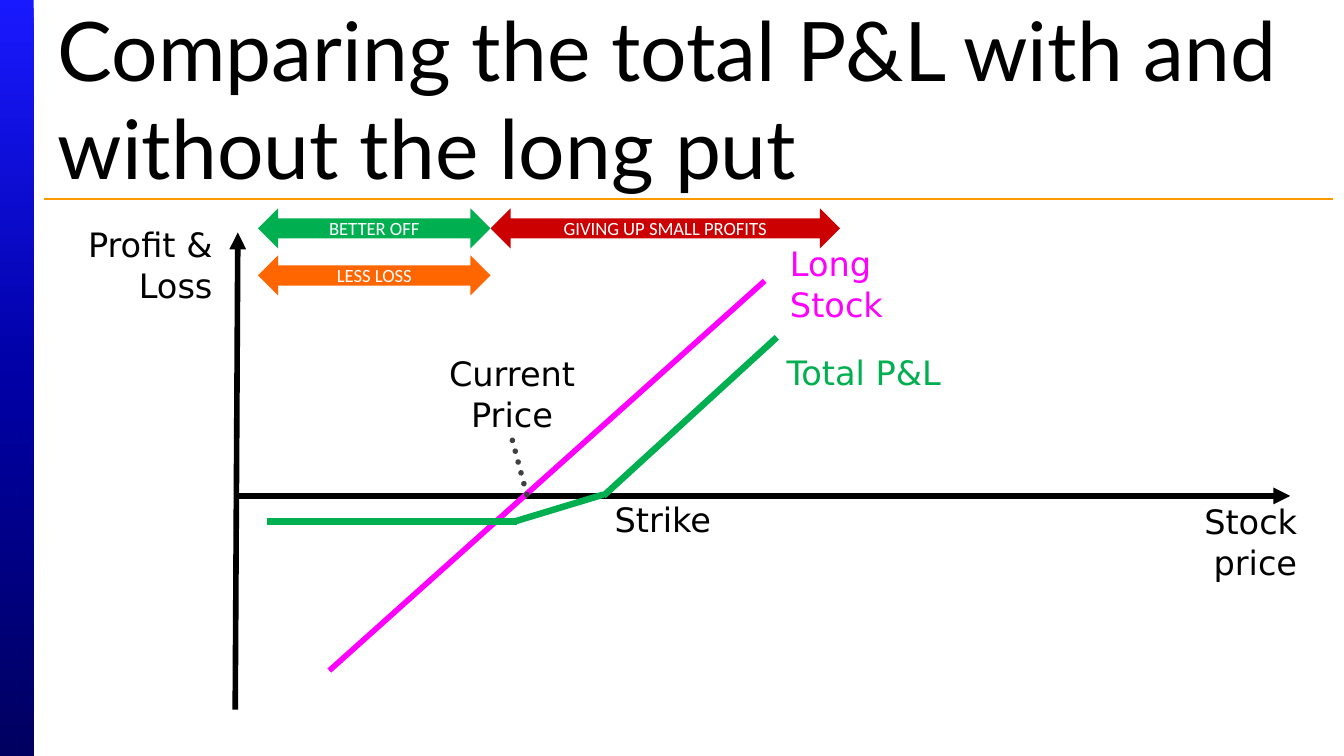
from copy import deepcopy
from typing import NamedTuple

from pptx import Presentation
from pptx import util as u
from pptx.dml.color import RGBColor
from pptx.enum import dml, shapes, text
from pptx.oxml.ns import qn
from pptx.oxml.xmlchemy import OxmlElement

SLIDE_WIDTH = 10
SLIDE_HEIGHT = SLIDE_WIDTH * 9 / 16
BLACK, WHITE, GREEN, PINK = "000000", "FFFFFF", "00B050", "FF00FF"
LEFT, CENTER, RIGHT = text.PP_ALIGN.LEFT, text.PP_ALIGN.CENTER, text.PP_ALIGN.RIGHT


class Line(NamedTuple):
    start: tuple[float, float]
    end: tuple[float, float]
    color: str
    width: float
    arrow: bool = False
    dotted: bool = False


class Label(NamedTuple):
    words: str
    place: tuple[float, float, float, float]
    align: text.PP_ALIGN
    color: str = BLACK


class RangeArrow(NamedTuple):
    words: str
    left: float
    top: float
    width: float
    color: str


def rgb(value: str) -> RGBColor:
    return RGBColor.from_string(value)


def inches(values) -> list:
    return [u.Inches(value) for value in values]


def write(frame, words: str, *, size: float, font: str, color: str, align=LEFT,
          anchor=text.MSO_ANCHOR.TOP, fit=text.MSO_AUTO_SIZE.NONE) -> None:
    frame.word_wrap = True
    frame.auto_size = fit
    frame.vertical_anchor = anchor
    para = frame.paragraphs[0]
    para.alignment = align
    span = para.add_run()
    span.text = words
    span.font.size = u.Pt(size)
    span.font.name = font
    span.font.color.rgb = rgb(color)


def draw_line(page, line: Line) -> None:
    connector = page.shapes.add_connector(
        shapes.MSO_CONNECTOR.STRAIGHT, *inches(line.start + line.end))
    connector.line.color.rgb = rgb(line.color)
    connector.line.width = u.Pt(line.width)
    outline = connector.line._get_or_add_ln()
    if line.dotted:
        connector.line.dash_style = dml.MSO_LINE.ROUND_DOT
        outline.set("cap", "rnd")
    if line.arrow:
        head = OxmlElement("a:headEnd")
        head.set("type", "triangle")
        outline.append(head)
    connector._element.spPr.append(OxmlElement("a:effectLst"))


def draw_label(page, label: Label) -> None:
    box = page.shapes.add_textbox(*inches(label.place))
    write(box.text_frame, label.words, size=18, font="DejaVu Sans", color=label.color,
          align=label.align, fit=text.MSO_AUTO_SIZE.SHAPE_TO_FIT_TEXT)


def draw_range(page, item: RangeArrow) -> None:
    arrow = page.shapes.add_shape(
        shapes.MSO_SHAPE.LEFT_RIGHT_ARROW, *inches((item.left, item.top, item.width, 0.3)))
    arrow.shadow.inherit = False
    arrow.fill.solid()
    arrow.fill.fore_color.rgb = rgb(item.color)
    arrow.line.fill.background()
    frame = arrow.text_frame
    frame.margin_top = frame.margin_bottom = 0
    write(frame, item.words, size=10, font="Calibri", color=WHITE,
          align=CENTER, anchor=text.MSO_ANCHOR.MIDDLE)


def draw_side_band(page) -> None:
    band = page.shapes.add_shape(
        shapes.MSO_SHAPE.RECTANGLE, *inches((0, 0, 0.25, SLIDE_HEIGHT)))
    band.shadow.inherit = False
    band.line.fill.background()
    band.fill.gradient()
    band.fill.gradient_angle = 270
    stop_list = band._element.spPr.find(qn("a:gradFill")).find(qn("a:gsLst"))
    stop_list.append(deepcopy(stop_list[-1]))
    colors = ("1919FF", "0000A5", "000060")
    for stop, position, color in zip(band.fill.gradient_stops, (0, 0.5, 1), colors):
        stop.position = position
        stop.color.rgb = rgb(color)


RANGES = [
    RangeArrow("GIVING UP SMALL PROFITS", 3.65, 1.55, 2.6, "CC0000"),
    RangeArrow("BETTER OFF", 1.92, 1.55, 1.73, GREEN),
    RangeArrow("LESS LOSS", 1.92, 1.9, 1.73, "FF6600"),
]
LINES = [
    Line((0.33, 1.48), (9.92, 1.48), "FF9900", 0.75),
    # Axes, with the head at the start
    Line((1.77, 1.73), (1.75, 5.28), BLACK, 3, arrow=True),
    Line((9.6, 3.69), (1.77, 3.69), BLACK, 3, arrow=True),
    # Long stock and the pointer to the current price
    Line((2.45, 4.99), (5.69, 2.09), PINK, 3),
    Line((3.92, 3.68), (3.8, 3.23), "404040", 3, dotted=True),
    # Total profit and loss, in three parts
    Line((4.49, 3.69), (5.78, 2.51), GREEN, 3.5),
    Line((1.99, 3.88), (3.85, 3.88), GREEN, 3.5),
    Line((3.83, 3.88), (4.49, 3.68), GREEN, 3.5),
]
LABELS = [
    Label("Stock price", (8.67, 3.68, 1.08, 0.71), RIGHT),
    Label("Long Stock", (5.78, 1.76, 1.5, 0.71), LEFT, PINK),
    Label("Strike", (4.31, 3.66, 1.08, 0.4), RIGHT),
    Label("Current Price", (3.1, 2.58, 1.42, 0.71), CENTER),
    Label("Profit & Loss", (0.51, 1.62, 1.17, 0.57), RIGHT),
    Label("Total P&L", (5.46, 2.57, 1.64, 0.4), RIGHT, GREEN),
]


def main() -> None:
    deck = Presentation()
    deck.slide_width, deck.slide_height = inches((SLIDE_WIDTH, SLIDE_HEIGHT))
    page = deck.slides.add_slide(deck.slide_layouts[5])

    # Title and side band
    title = page.shapes.title
    title.left, title.top, title.width, title.height = inches((0.33, 0.06, 9.58, 1.33))
    title.fill.solid()
    title.fill.fore_color.rgb = rgb(WHITE)
    write(title.text_frame, "Comparing the total P&L with and without the long put",
          size=44, font="Lato", color=BLACK, anchor=text.MSO_ANCHOR.MIDDLE)
    draw_side_band(page)

    # Payoff diagram
    for item in RANGES:
        draw_range(page, item)
    for line in LINES:
        draw_line(page, line)
    for label in LABELS:
        draw_label(page, label)

    deck.save("out.pptx")


if __name__ == "__main__":
    main()
